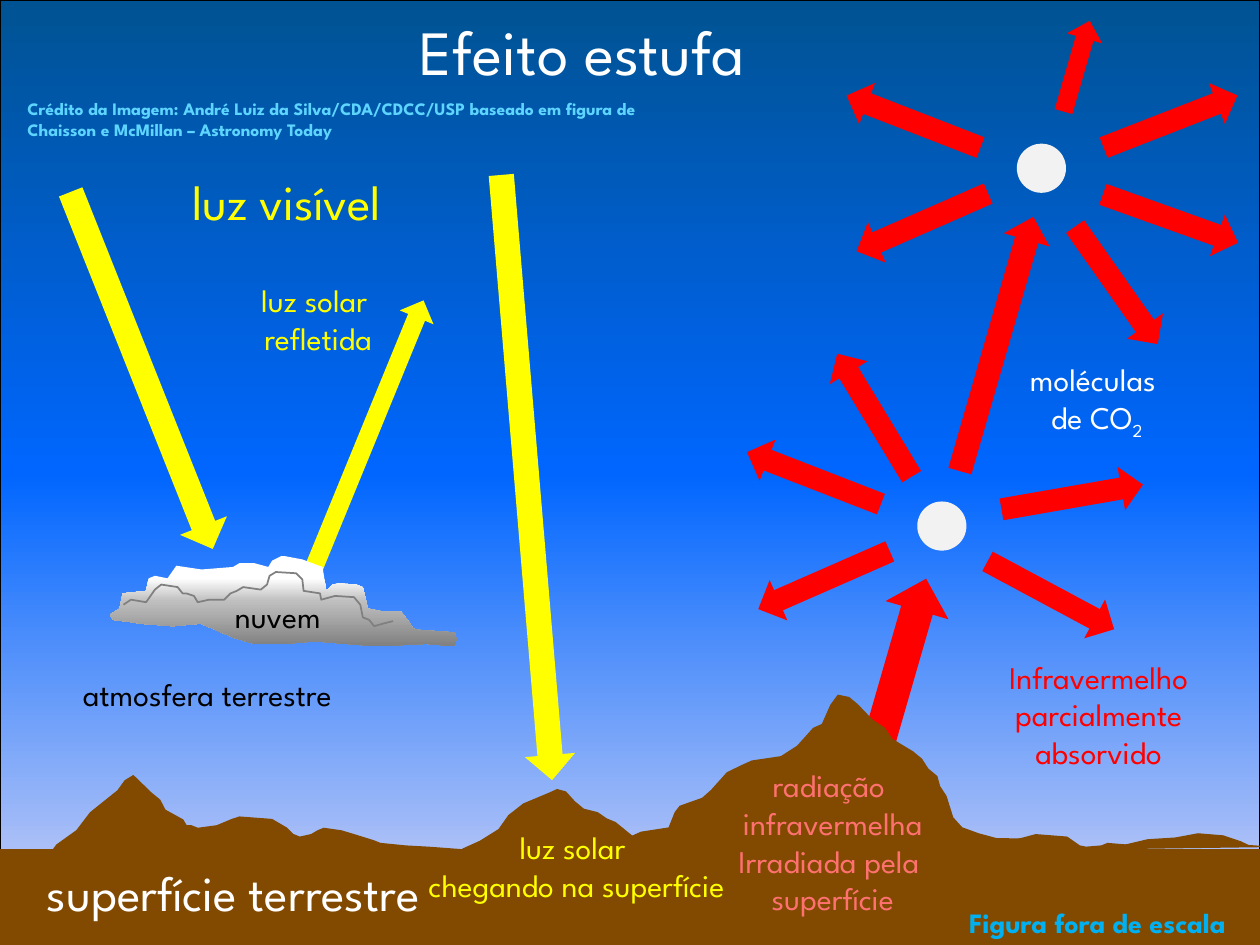
from lxml import etree
from pptx import Presentation
from pptx.dml.color import RGBColor
from pptx.enum.shapes import MSO_SHAPE
from pptx.enum.text import MSO_AUTO_SIZE, PP_ALIGN
from pptx.oxml.ns import qn
from pptx.util import Pt

PX = 9144  # 100 px to the inch
RECT, OVAL, ARROW = MSO_SHAPE.RECTANGLE, MSO_SHAPE.OVAL, MSO_SHAPE.RIGHT_ARROW
CENTER, LEFT = PP_ALIGN.CENTER, PP_ALIGN.LEFT
GROW, FIXED = MSO_AUTO_SIZE.SHAPE_TO_FIT_TEXT, MSO_AUTO_SIZE.NONE
FONT = "League Spartan"
RED, YELLOW, WHITE, BLACK = "FF0000", "FFFF00", "FFFFFF", "000000"
BROWN, GREY = "824A00", "808080"

prs = Presentation()
prs.slide_width, prs.slide_height = 1000 * PX, 750 * PX
slide = prs.slides.add_slide(prs.slide_layouts[6])
slide.background.fill.solid()
slide.background.fill.fore_color.rgb = RGBColor.from_string(BLACK)
shapes = slide.shapes


def paint(shape, fill=None, line=None):
    """Fill is a hex string, a list of (percent, hex) from top to bottom, or None."""
    shape.shadow.inherit = False
    if fill is None:
        shape.fill.background()
    elif isinstance(fill, str):
        shape.fill.solid()
        shape.fill.fore_color.rgb = RGBColor.from_string(fill)
    else:
        shape.fill.gradient()
        shape.fill.gradient_angle = 270
        stops = shape._element.spPr.find(".//" + qn("a:gsLst"))
        for old_stop in list(stops):
            stops.remove(old_stop)
        for percent, color in fill:
            stop = etree.SubElement(stops, qn("a:gs"), pos=str(percent * 1000))
            etree.SubElement(stop, qn("a:srgbClr"), val=color)
    if line:
        shape.line.color.rgb = RGBColor.from_string(line)
        shape.line.width = Pt(1)
    else:
        shape.line.fill.background()


def write_text(lines, box, color, size=18, bold=False, align=CENTER,
               wrap=True, fit=GROW, inset=10, subscript=None):
    frame = shapes.add_textbox(*(v * PX for v in box)).text_frame
    frame.word_wrap, frame.auto_size = wrap, fit
    frame.margin_left = inset * PX
    for i, line in enumerate(lines):
        paragraph = frame.paragraphs[0] if i == 0 else frame.add_paragraph()
        paragraph.alignment = align
        paragraph.add_run().text = line
        if subscript and i == len(lines) - 1:
            lowered = paragraph.add_run()
            lowered.text = subscript
            lowered._r.get_or_add_rPr().set("baseline", "-25000")
        for run in paragraph.runs:
            run.font.name, run.font.size, run.font.bold = FONT, Pt(size), bold
            run.font.color.rgb = RGBColor.from_string(color)


# Sky
sky = shapes.add_shape(RECT, 0, 0, 1000 * PX, 750 * PX)
paint(sky, [(0, "005392"), (50, "0066FF"), (100, "D6D6F5")], BLACK)

# Rays: colour, length, thickness, then left, top and angle of each
rays = [
    (YELLOW, 305, 40, [(-40, 274, 68.3)]),
    (YELLOW, 238, 29, [(172, 334, 292.3)]),
    (YELLOW, 482, 40, [(177, 359, 85.2)]),
    (RED, 166, 52, [(629, 513, 286.1)]),
    (RED, 210, 38, [(686, 254, 286.1)]),
    (RED, 75, 29, [(817, 38, 286.1)]),
    (RED, 114, 35, [
        (589, 362, 201.2), (597, 443, 156.3), (794, 377, 350.1),
        (777, 455, 28.2), (637, 312, 238.8),
        (668, 79, 201.2), (675, 159, 156.3), (872, 156, 19.7),
        (829, 209, 54.9), (872, 79, 338.7)]),
]
for color, length, thickness, places in rays:
    for left, top, angle in places:
        ray = shapes.add_shape(ARROW, left * PX, top * PX, length * PX, thickness * PX)
        ray.rotation = angle
        paint(ray, color)

# Ground
ground = shapes.add_shape(RECT, 0, 674 * PX, 1000 * PX, 76 * PX)
paint(ground, BROWN)

# Cloud, its inner contour and the hills
cloud = [
    (97, 471), (116, 469), (118, 459), (123, 457), (133, 459), (140, 449), (160, 452),
    (185, 450), (190, 447), (202, 447), (213, 450), (216, 445), (224, 441), (240, 444),
    (256, 450), (257, 456), (259, 469), (264, 464), (269, 463), (283, 464), (288, 466),
    (292, 483), (302, 485), (318, 485), (325, 494), (328, 499), (333, 500), (361, 502),
    (363, 507), (361, 513), (338, 511), (300, 513), (250, 509), (226, 511), (202, 511),
    (195, 509), (185, 506), (169, 499), (159, 495), (137, 497), (111, 495), (106, 494),
    (90, 492), (87, 488), (95, 483), (97, 473)]
contour = [
    (98, 480), (104, 476), (116, 478), (123, 468), (128, 464), (141, 466), (145, 471),
    (148, 471), (154, 473), (157, 478), (166, 476), (178, 476), (183, 471), (188, 469),
    (193, 466), (207, 468), (212, 464), (214, 457), (219, 454), (235, 455), (240, 460),
    (241, 469), (254, 471), (255, 476), (266, 473), (281, 474), (286, 480), (288, 490),
    (293, 492), (297, 497), (304, 495), (312, 493)]
mountains = [
    (13, 677), (37, 671), (44, 662), (60, 651), (71, 637), (93, 620), (99, 612),
    (106, 608), (120, 622), (127, 628), (131, 636), (145, 644), (154, 660), (161, 669),
    (175, 674), (188, 671), (204, 665), (218, 668), (224, 673), (242, 676), (249, 678),
    (300, 680), (364, 679), (366, 671), (380, 665), (395, 656), (403, 645), (415, 636),
    (435, 628), (442, 625), (449, 627), (456, 635), (463, 641), (474, 644), (481, 649),
    (488, 652), (501, 663), (508, 660), (530, 657), (535, 645), (539, 640), (557, 634),
    (564, 628), (577, 614), (590, 608), (597, 605), (620, 602), (633, 594), (646, 580),
    (653, 577), (660, 562), (666, 554), (675, 556), (682, 562), (693, 574), (703, 581),
    (709, 590), (725, 600), (732, 606), (737, 614), (744, 620), (746, 628), (751, 636),
    (756, 653), (763, 661), (776, 666), (790, 670), (819, 671), (828, 674), (835, 679),
    (842, 682), (887, 678), (910, 673), (932, 672), (950, 669), (970, 671), (984, 676),
    (990, 679), (1013, 681)]
right_hill = [
    (774, 667), (786, 671), (802, 669), (807, 666), (822, 662), (847, 664), (857, 671),
    (862, 672), (874, 671), (879, 669), (903, 671), (919, 676), (929, 679), (933, 684),
    (931, 693), (910, 698), (893, 697), (888, 695), (857, 693), (852, 691), (803, 688),
    (793, 681), (783, 676)]
left_hill = [
    (152, 655), (157, 657), (172, 655), (184, 650), (190, 648), (216, 650), (228, 657),
    (233, 662), (238, 664), (247, 662), (252, 659), (257, 657), (271, 659), (281, 662),
    (297, 667), (302, 669), (322, 671), (340, 672), (367, 674), (366, 679), (334, 681),
    (329, 683), (302, 684), (290, 686), (284, 690), (279, 691), (262, 695), (193, 693),
    (183, 690), (167, 679), (162, 676), (152, 671), (147, 655)]
outlines = [
    (cloud, True, 0, [(25, WHITE), (50, "BFBFBF"), (100, GREY)], None),
    (contour, False, 0, None, GREY),
    (mountains, True, 359, BROWN, None),
    (right_hill, True, 0, BROWN, None),
    (left_hill, True, 0, BROWN, None),
]
for points, closed, angle, fill, line in outlines:
    builder = shapes.build_freeform(*points[0], scale=PX)
    builder.add_line_segments(points[1:], close=closed)
    outline = builder.convert_to_shape()
    outline.rotation = angle
    paint(outline, fill, line)

# CO2 molecules
for left, top in [(728, 398), (807, 114)]:
    molecule = shapes.add_shape(OVAL, left * PX, top * PX, 39 * PX, 39 * PX)
    paint(molecule, "F2F2F2")

# Title and credit
write_text(["Efeito estufa"], (4, 5, 819, 125), WHITE, size=36, fit=FIXED, inset=107)
write_text(["Crédito da Imagem: André Luiz da Silva/CDA/CDCC/USP baseado em figura de "
            "Chaisson e McMillan – Astronomy Today"],
           (12, 73, 520, 44), "5DD5FF", size=10, bold=True, align=LEFT)

# Labels
write_text(["nuvem"], (122, 469, 197, 40), BLACK)
write_text(["atmosfera terrestre"], (35, 531, 259, 40), BLACK)
write_text(["luz visível"], (98, 131, 259, 57), YELLOW, size=28)
write_text(["luz solar ", "refletida"], (123, 218, 259, 71), YELLOW)
write_text(["luz solar ", "chegando na superfície"], (328, 652, 259, 71), YELLOW)
write_text(["radiação ", "infravermelha", "Irradiada pela ", "superfície"],
           (421, 603, 480, 131), "FF7171")
write_text(["superfície terrestre"], (-51, 680, 472, 57), WHITE, size=28)
write_text(["moléculas ", "de CO"], (741, 281, 259, 71), WHITE, subscript="2")
write_text(["Infravermelho", "parcialmente", "absorvido"], (744, 517, 256, 101), RED)
write_text(["Figura fora de escala"], (745, 714, 252, 37), "00B0F0",
           size=16, bold=True, wrap=False)

prs.save("out.pptx")
